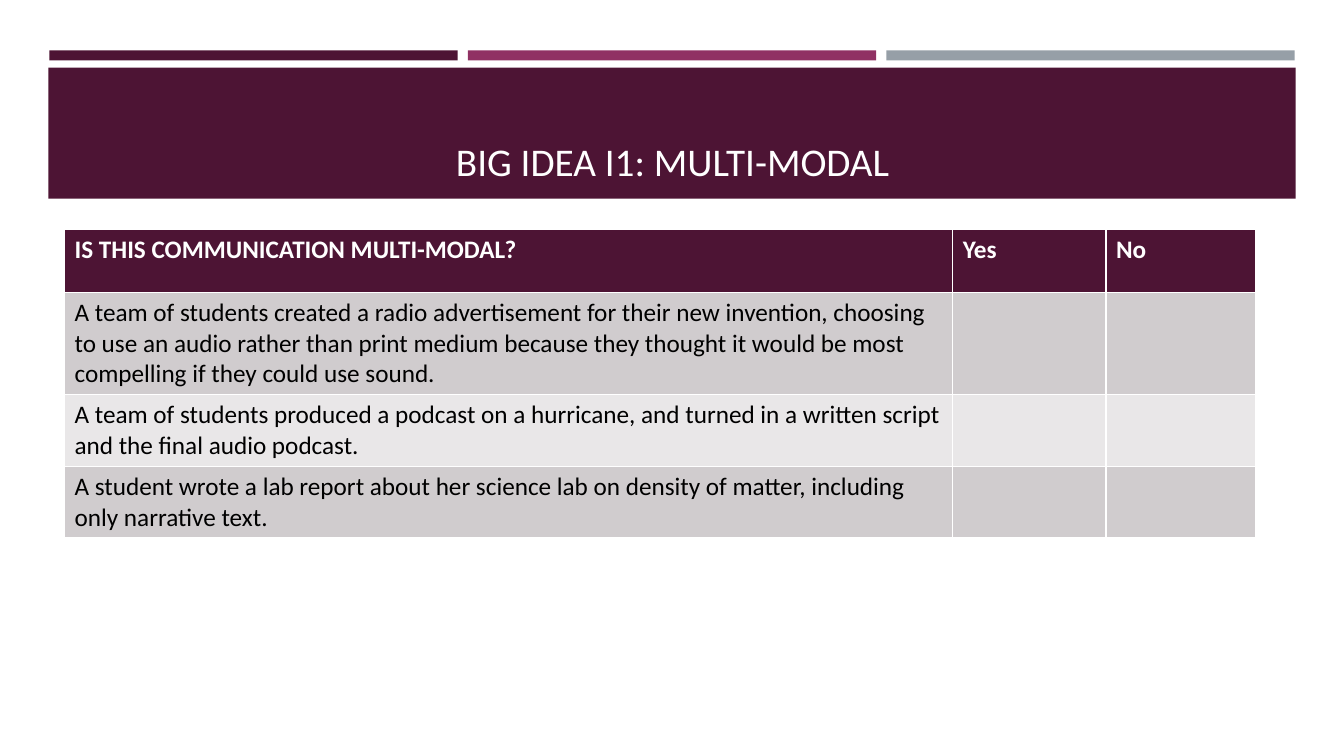
from pptx import Presentation
from pptx.dml.color import RGBColor
from pptx.enum.shapes import MSO_SHAPE
from pptx.enum.text import MSO_ANCHOR, MSO_AUTO_SIZE, PP_ALIGN
from pptx.util import Inches, Pt

PLUM = RGBColor(0x4D, 0x14, 0x34)
MAGENTA = RGBColor(0x90, 0x31, 0x63)
GRAY = RGBColor(0x96, 0x9F, 0xA7)
DARK_BAND = RGBColor(0xD0, 0xCC, 0xCE)
LIGHT_BAND = RGBColor(0xE9, 0xE7, 0xE8)
WHITE = RGBColor(0xFF, 0xFF, 0xFF)
BLACK = RGBColor(0, 0, 0)
FONT = "Calibri"

TITLE = "BIG IDEA I1: MULTI-MODAL"
ROWS = [
    ("IS THIS COMMUNICATION MULTI-MODAL?", "Yes", "No"),
    ("A team of students created a radio advertisement for their new invention, "
     "choosing to use an audio rather than print medium because they thought it "
     "would be most compelling if they could use sound.", "", ""),
    ("A team of students produced a podcast on a hurricane, and turned in a "
     "written script and the final audio podcast.", "", ""),
    ("A student wrote a lab report about her science lab on density of matter, "
     "including only narrative text.", "", ""),
]
COLUMN_WIDTHS = (8.81, 1.52, 1.48)
ROW_HEIGHT = 0.62
STRIPE_COLORS = (PLUM, MAGENTA, GRAY)
STRIPE_LEFT, STRIPE_WIDTH, STRIPE_STEP = 0.49, 4.05, 4.15


def add_bar(slide, left, top, width, height, color):
    bar = slide.shapes.add_shape(MSO_SHAPE.RECTANGLE, Inches(left), Inches(top),
                                 Inches(width), Inches(height))
    bar.shadow.inherit = False
    bar.fill.solid()
    bar.fill.fore_color.rgb = color
    bar.line.fill.background()


def style_font(paragraph, size, color, bold=False):
    font = paragraph.font
    font.name, font.size, font.bold = FONT, Pt(size), bold
    font.color.rgb = color


def place_title(slide):
    title = slide.shapes.title
    title.left, title.top = Inches(0.64), Inches(0.77)
    title.width, title.height = Inches(12.06), Inches(1.11)
    frame = title.text_frame
    frame.text = TITLE
    frame.word_wrap = True
    frame.auto_size = MSO_AUTO_SIZE.NONE
    frame.vertical_anchor = MSO_ANCHOR.BOTTOM
    paragraph = frame.paragraphs[0]
    paragraph.alignment = PP_ALIGN.CENTER
    style_font(paragraph, 28, WHITE)
    # Bring the title in front of its band
    title.element.getparent().append(title.element)


def add_question_table(slide):
    table = slide.shapes.add_table(
        len(ROWS), len(COLUMN_WIDTHS), Inches(0.64), Inches(2.28),
        Inches(sum(COLUMN_WIDTHS)), Inches(ROW_HEIGHT * len(ROWS))).table
    for column, width in zip(table.columns, COLUMN_WIDTHS):
        column.width = Inches(width)
    for row_index, texts in enumerate(ROWS):
        header = row_index == 0
        band = DARK_BAND if row_index % 2 else LIGHT_BAND
        for column_index, text in enumerate(texts):
            cell = table.cell(row_index, column_index)
            cell.text = text
            cell.fill.solid()
            cell.fill.fore_color.rgb = PLUM if header else band
            style_font(cell.text_frame.paragraphs[0], 18,
                       WHITE if header else BLACK, header)


def main():
    presentation = Presentation()
    presentation.slide_width, presentation.slide_height = Inches(13.33), Inches(7.5)
    slide = presentation.slides.add_slide(presentation.slide_layouts[5])
    for index, color in enumerate(STRIPE_COLORS):
        add_bar(slide, STRIPE_LEFT + index * STRIPE_STEP, 0.5, STRIPE_WIDTH, 0.1, color)
    add_bar(slide, 0.48, 0.67, 12.37, 1.3, PLUM)
    place_title(slide)
    add_question_table(slide)
    presentation.save("out.pptx")


if __name__ == "__main__":
    main()
